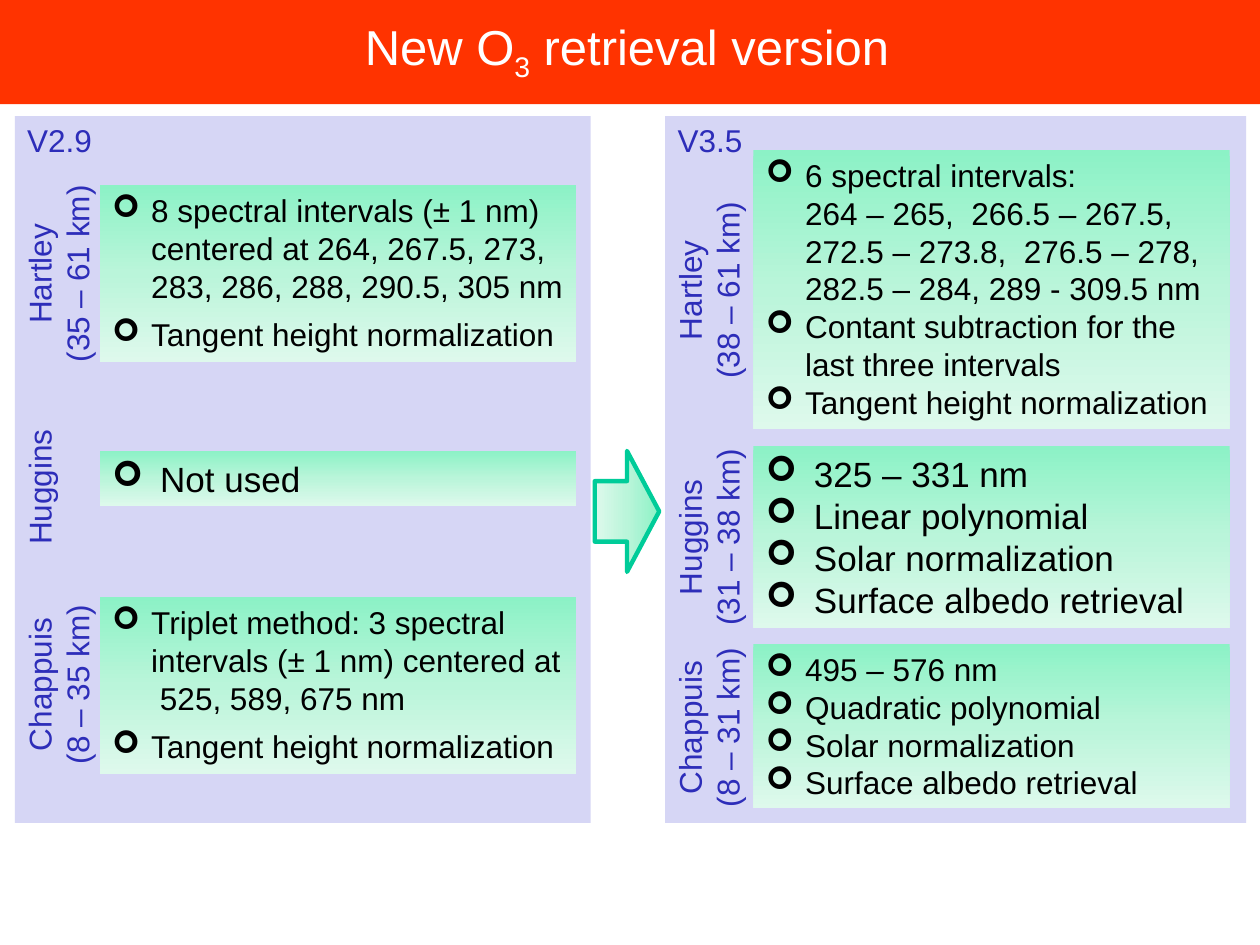
from copy import deepcopy
from dataclasses import dataclass

from lxml.etree import SubElement
from pptx import Presentation
from pptx.dml.color import RGBColor
from pptx.enum.shapes import MSO_SHAPE as Shape
from pptx.enum.text import MSO_ANCHOR as Anchor, MSO_AUTO_SIZE as AutoSize, PP_ALIGN as Align
from pptx.oxml.ns import qn
from pptx.util import Cm, Pt


@dataclass(frozen=True)
class Theme:
    font: str = "Arial"
    header: str = "FF3300"
    panel: str = "D6D6F5"
    label: str = "2D2DB9"
    body: str = "000000"
    title: str = "FFFFFF"
    arrow_line: str = "00CC99"
    gradient: tuple[str, ...] = ("8CF2C6", "BAF5DA", "DEF9EC")
    title_size: int = 28
    text_size: int = 18
    large_size: int = 20


@dataclass(frozen=True)
class Band:
    """A wavelength band: rotated label and bulleted box (cm)."""
    label: str
    label_mid: float
    label_length: float
    top: float
    height: float
    items: tuple[str, ...]
    size: int = 18
    indent: float = 0.79
    gap: int = 0


@dataclass(frozen=True)
class Panel:
    version: str
    left: float
    width: float
    box_left: float
    bands: tuple[Band, ...]


THEME = Theme()
PANEL_TOP, PANEL_HEIGHT = 2.34, 14.25
BOX_WIDTH = 9.6
LABEL_HEIGHT, LABEL_OFFSET = 1.8, 0.88
LARGE = {"size": THEME.large_size, "indent": 0.97}
NORMALIZATION = "Tangent height normalization"
SOLAR_ALBEDO = ("Solar normalization", "Surface albedo retrieval")

PANELS = (
    Panel("V2.9", 0.3, 11.61, 2.01, (
        Band("Hartley\n(35 – 61 km)", 5.52, 4.39, 3.73, 3.56,
             ("8 spectral intervals (± 1 nm) centered at 264, 267.5, 273, "
              "283, 286, 288, 290.5, 305 nm", NORMALIZATION), gap=6),
        Band("Huggins", 9.82, 4.19, 9.09, 1.12, ("Not used",), **LARGE),
        Band("Chappuis\n(8 – 35 km)", 13.8, 3.86, 12.04, 3.56,
             ("Triplet method: 3 spectral intervals (± 1 nm) centered at\v 525, 589, 675 nm",
              NORMALIZATION), gap=6),
    )),
    Panel("V3.5", 13.41, 11.71, 15.19, (
        Band("Hartley\n(38 – 61 km)", 5.85, 5.64, 3.02, 5.64,
             ("6 spectral intervals:\v264 – 265,  266.5 – 267.5,  272.5 – 273.8,  "
              "276.5 – 278, 282.5 – 284, 289 - 309.5 nm",
              "Contant subtraction for the last three intervals", NORMALIZATION)),
        Band("Huggins\n(31 – 38 km)", 10.83, 4.19, 8.99, 3.68,
             ("325 – 331 nm", "Linear polynomial", *SOLAR_ALBEDO), **LARGE),
        Band("Chappuis\n(8 – 31 km)", 14.67, 3.86, 12.98, 3.32,
             ("495 – 576 nm", "Quadratic polynomial", *SOLAR_ALBEDO)),
    )),
)


def add_block(slide, kind: Shape, x: float, y: float, w: float, h: float):
    s = slide.shapes.add_shape(kind, Cm(x), Cm(y), Cm(w), Cm(h))
    s.shadow.inherit = False
    s.line.fill.background()
    return s


def fill_solid(s, color: str) -> None:
    s.fill.solid()
    s.fill.fore_color.rgb = RGBColor.from_string(color)


def fill_gradient(s, angle: int) -> None:
    s.fill.gradient()
    s.fill.gradient_angle = angle
    stops = s.element.spPr.find(".//" + qn("a:gsLst"))
    stops.insert(1, deepcopy(stops[0]))
    for i, (stop, color) in enumerate(zip(s.fill.gradient_stops, THEME.gradient)):
        stop.position = i / 2
        stop.color.rgb = RGBColor.from_string(color)


def style_runs(p, size: int, color: str) -> None:
    for r in p.runs:
        r.font.name = THEME.font
        r.font.size = Pt(size)
        r.font.color.rgb = RGBColor.from_string(color)


def add_text(slide, text: str, x: float, y: float, w: float, h: float,
             size: int, color: str, align: Align = Align.LEFT):
    s = slide.shapes.add_textbox(Cm(x), Cm(y), Cm(w), Cm(h))
    tf = s.text_frame
    tf.word_wrap = True
    tf.text = text
    for p in tf.paragraphs:
        p.alignment = align
        style_runs(p, size, color)
    return s


def add_bullet(p, indent: float) -> None:
    pPr = p._p.get_or_add_pPr()
    pPr.set("marL", str(Cm(indent)))
    pPr.set("indent", str(-Cm(indent)))
    SubElement(pPr, qn("a:buFont"), typeface="Wingdings")
    SubElement(pPr, qn("a:buChar"), char="➢")


def add_band(slide, panel: Panel, band: Band) -> None:
    # Bulleted box
    s = add_block(slide, Shape.RECTANGLE, panel.box_left, band.top, BOX_WIDTH, band.height)
    fill_gradient(s, 270)
    tf = s.text_frame
    tf.word_wrap = True
    tf.auto_size = AutoSize.SHAPE_TO_FIT_TEXT
    tf.vertical_anchor = Anchor.TOP
    tf.text = "\n".join(band.items)
    for i, p in enumerate(tf.paragraphs):
        add_bullet(p, band.indent)
        p.alignment = Align.LEFT
        if i and band.gap:
            p.space_before = p.space_after = Pt(band.gap)
        style_runs(p, band.size, THEME.body)

    # Rotated label
    label = add_text(slide, band.label, panel.left + LABEL_OFFSET - band.label_length / 2,
                     band.label_mid - LABEL_HEIGHT / 2, band.label_length, LABEL_HEIGHT,
                     THEME.text_size, THEME.label, Align.CENTER)
    label.rotation = 270


def add_panel(slide, panel: Panel) -> None:
    s = add_block(slide, Shape.RECTANGLE, panel.left, PANEL_TOP, panel.width, PANEL_HEIGHT)
    fill_solid(s, THEME.panel)
    add_text(slide, panel.version, panel.left, 2.31, 5, 1.02, THEME.text_size, THEME.label)
    for band in panel.bands:
        add_band(slide, panel, band)


def add_header(slide) -> None:
    fill_solid(add_block(slide, Shape.RECTANGLE, 0, 0, 25.4, 2.1), THEME.header)
    s = add_text(slide, "New O", 1, 0, 23.28, 2, THEME.title_size, THEME.title, Align.CENTER)
    s.text_frame.vertical_anchor = Anchor.MIDDLE
    p = s.text_frame.paragraphs[0]
    for text in ("3", " retrieval version"):
        p.add_run().text = text
    style_runs(p, THEME.title_size, THEME.title)
    p.runs[1].font._element.set("baseline", "-25000")


def add_arrow(slide) -> None:
    s = add_block(slide, Shape.RIGHT_ARROW, 11.99, 9.09, 1.3, 2.44)
    fill_gradient(s, 180)
    s.line.color.rgb = RGBColor.from_string(THEME.arrow_line)
    s.line.width = Pt(2.5)


def main() -> None:
    prs = Presentation()
    prs.slide_width, prs.slide_height = Cm(25.4), Cm(19.05)
    slide = prs.slides.add_slide(prs.slide_layouts[6])
    add_header(slide)
    for panel in PANELS:
        add_panel(slide, panel)
    add_arrow(slide)
    prs.save("out.pptx")


if __name__ == "__main__":
    main()
